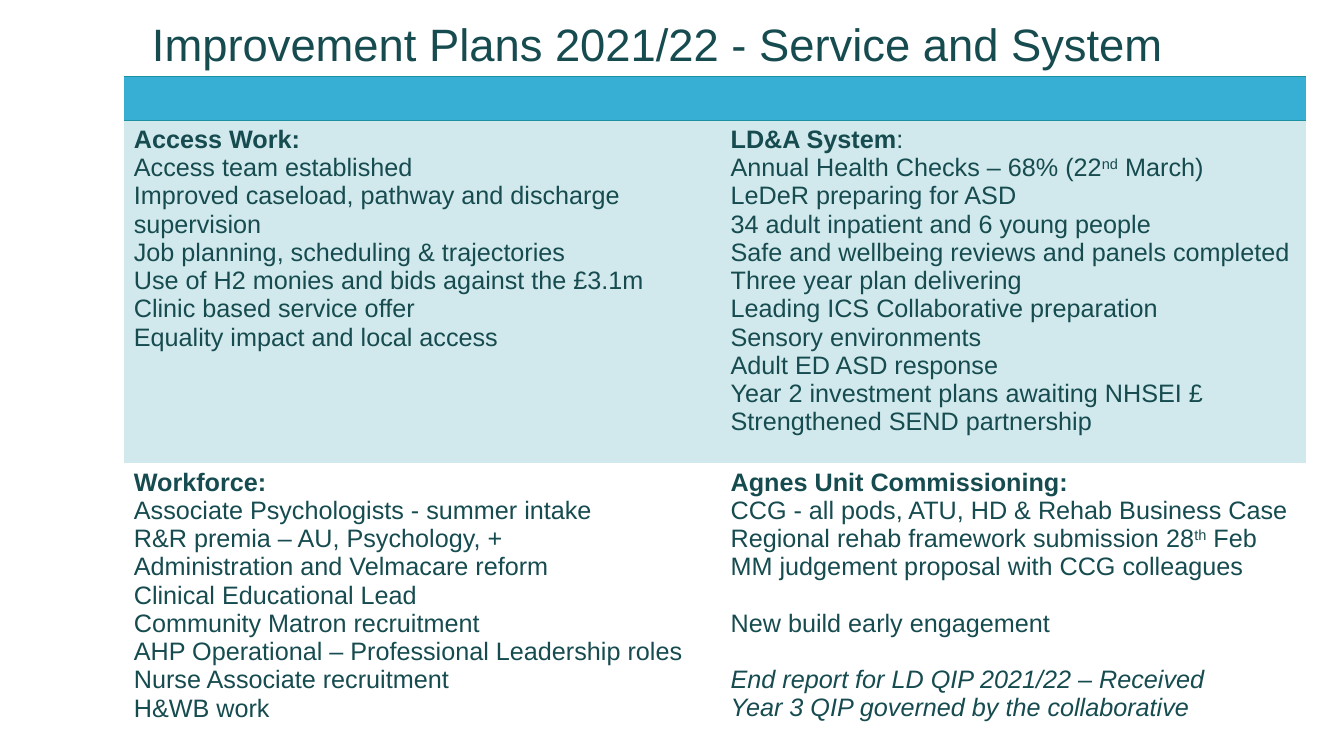
from lxml import etree
from pptx import Presentation
from pptx.dml.color import RGBColor
from pptx.enum.text import MSO_ANCHOR
from pptx.oxml.ns import qn
from pptx.util import Cm, Pt

ANCHOR_BOTTOM = MSO_ANCHOR.BOTTOM
DARK_TEAL = RGBColor(0x16, 0x4B, 0x4F)
TEAL = RGBColor(0x1B, 0x91, 0xA1)
HEADER_BLUE = RGBColor(0x37, 0xAF, 0xD5)
PALE_TEAL = RGBColor(0xD1, 0xE9, 0xEC)
NO_TABLE_STYLE = "{2D5ABB26-0587-4C30-8999-92F81FD0307C}"

BOLD = {"bold": True}
ITALIC = {"italic": True}
SUPERSCRIPT = {"baseline": "30000"}
BLANK_LINE = Pt(20.1)

ACCESS_WORK = [
    [("Access Work:", BOLD)],
    "Access team established",
    "Improved caseload, pathway and discharge supervision",
    "Job planning, scheduling & trajectories",
    "Use of H2 monies and bids against the £3.1m",
    "Clinic based service offer",
    "Equality impact and local access",
]
SYSTEM = [
    [("LD&A System", BOLD), (":", {})],
    [("Annual Health Checks – 68% (22", {}), ("nd", SUPERSCRIPT), (" March)", {})],
    "LeDeR preparing for ASD",
    "34 adult inpatient and 6 young people",
    "Safe and wellbeing reviews and panels completed",
    "Three year plan delivering",
    "Leading ICS Collaborative preparation",
    "Sensory environments",
    "Adult ED ASD response",
    "Year 2 investment plans awaiting NHSEI £",
    "Strengthened SEND partnership",
]
WORKFORCE = [
    [("Workforce:", BOLD)],
    "Associate Psychologists - summer intake",
    "R&R premia – AU, Psychology, +",
    "Administration and Velmacare reform",
    "Clinical Educational Lead",
    "Community Matron recruitment",
    "AHP Operational – Professional Leadership roles",
    "Nurse Associate recruitment",
    "H&WB work",
]
COMMISSIONING = [
    [("Agnes Unit Commissioning:", BOLD)],
    "CCG - all pods, ATU, HD & Rehab Business Case",
    [("Regional rehab framework submission 28", {}), ("th", SUPERSCRIPT), (" Feb", {})],
    "MM judgement proposal with CCG colleagues",
    "New build early engagement",
    [("End report for LD QIP 2021/22 – Received", ITALIC)],
    [("Year 3 QIP governed by the collaborative", ITALIC)],
]
AFTER_GAP = [COMMISSIONING[4], COMMISSIONING[5]]
ROWS = [
    (Cm(1.12), HEADER_BLUE, [[], []], ["lnT", "lnB"]),
    (Cm(8.05), PALE_TEAL, [ACCESS_WORK, SYSTEM], []),
    (Cm(7.39), None, [WORKFORCE, COMMISSIONING], ["lnB"]),
]
COLUMN_WIDTHS = [Cm(15.04), Cm(14.76)]


def add_run(paragraph, text, size, style):
    run = paragraph.add_run()
    run.text = text
    run.font.color.rgb = DARK_TEAL
    for name, value in {"name": "Arial", "size": size, **style}.items():
        if name == "baseline":
            run._r.get_or_add_rPr().set(name, value)
        else:
            setattr(run.font, name, value)


def add_border(cell, side, position):
    border = etree.Element(qn("a:" + side), w=str(Pt(1)))
    fill = etree.SubElement(border, qn("a:solidFill"))
    etree.SubElement(fill, qn("a:srgbClr"), val=str(TEAL))
    cell._tc.get_or_add_tcPr().insert(position, border)


presentation = Presentation()
presentation.slide_width = Cm(33.87)
presentation.slide_height = Cm(19.05)
slide = presentation.slides.add_slide(presentation.slide_layouts[6])

title = slide.shapes.add_textbox(Cm(3.58), Cm(0.33), Cm(26.67), Cm(1.6))
title.text_frame.word_wrap = True
title.text_frame.vertical_anchor = ANCHOR_BOTTOM
title_paragraph = title.text_frame.paragraphs[0]
title_paragraph.line_spacing = 0.9
add_run(title_paragraph, "Improvement Plans 2021/22 - Service and System", Pt(32.4), {})

table = slide.shapes.add_table(
    len(ROWS), len(COLUMN_WIDTHS), Cm(3.12), Cm(1.92),
    sum(COLUMN_WIDTHS), sum(row[0] for row in ROWS),
).table
table.horz_banding = False
table._tbl.tblPr.find(qn("a:tableStyleId")).text = NO_TABLE_STYLE
for column, width in zip(table.columns, COLUMN_WIDTHS):
    column.width = width

for row, (height, fill_color, contents, borders) in zip(table.rows, ROWS):
    row.height = height
    for cell, lines in zip(row.cells, contents):
        if fill_color is None:
            cell.fill.background()
        else:
            cell.fill.solid()
            cell.fill.fore_color.rgb = fill_color
        for position, side in enumerate(borders):
            add_border(cell, side, position)
        for index, line in enumerate(lines):
            frame = cell.text_frame
            paragraph = frame.add_paragraph() if index else frame.paragraphs[0]
            if line in AFTER_GAP:
                paragraph.space_before = BLANK_LINE
            runs = [(line, {})] if isinstance(line, str) else line
            for text, style in runs:
                add_run(paragraph, text, Pt(18), style)

presentation.save("out.pptx")
